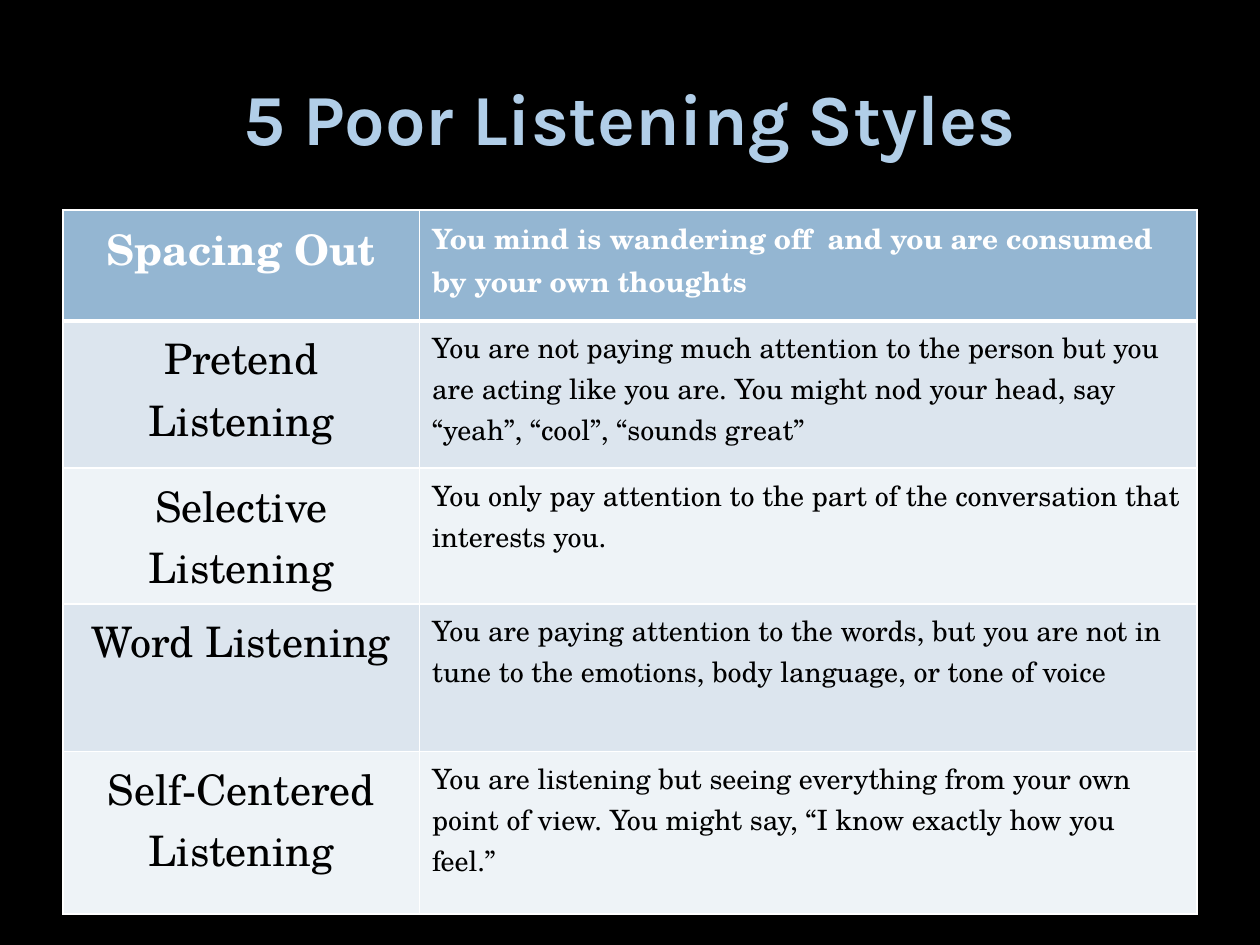
"""Build a slide with a table of five poor listening styles."""
from pptx import Presentation
from pptx.dml.color import RGBColor
from pptx.enum.text import MSO_ANCHOR as Anchor, PP_ALIGN as Align
from pptx.oxml import parse_xml
from pptx.oxml.ns import nsdecls
from pptx.util import Pt

BLACK = RGBColor(0x00, 0x00, 0x00)
WHITE = RGBColor(0xFF, 0xFF, 0xFF)
TITLE_BLUE = RGBColor(0xB1, 0xCE, 0xE8)
HEADER_BLUE = RGBColor(0x94, 0xB6, 0xD2)
BAND_DARK = RGBColor(0xDC, 0xE5, 0xEE)
BAND_LIGHT = RGBColor(0xEE, 0xF3, 0xF7)

COLUMN_WIDTHS = (203.76, 444.24)
ROW_HEIGHTS = (63.36, 84.24, 69.12, 84.24, 92.88)
STYLES = (
    ("Spacing Out", "You mind is wandering off  and you are consumed by your own thoughts"),
    ("Pretend Listening", "You are not paying much attention to the person but you are acting like you are. "
                          "You might nod your head, say “yeah”, “cool”, “sounds great”"),
    ("Selective Listening", "You only pay attention to the part of the conversation that interests you."),
    ("Word Listening", "You are paying attention to the words, but you are not in tune to the emotions, "
                       "body language, or tone of voice"),
    ("Self-Centered Listening", "You are listening but seeing everything from your own point of view. "
                                "You might say, “I know exactly how you feel.”"),
)


def write_text(frame, text, *, font, size, color, bold=False, align=Align.LEFT):
    paragraph = frame.paragraphs[0]
    paragraph.alignment = align
    run = paragraph.add_run()
    run.text = text
    run.font.name = font
    run.font.size = Pt(size)
    run.font.bold = bold
    run.font.color.rgb = color


def set_borders(cell, bottom, color=WHITE):
    properties = cell._tc.get_or_add_tcPr()
    widths = {"lnL": 1, "lnR": 1, "lnT": 1, "lnB": bottom}
    for position, (tag, width) in enumerate(widths.items()):
        properties.insert(position, parse_xml(
            f'<a:{tag} {nsdecls("a")} w="{Pt(width)}"><a:solidFill>'
            f'<a:srgbClr val="{color}"/></a:solidFill></a:{tag}>'))


class SlideBuilder:
    title_font = "Karla"
    body_font = "TeX Gyre Schola"

    def __init__(self, presentation):
        self.slide = presentation.slides.add_slide(presentation.slide_layouts[5])
        fill = self.slide.background.fill
        fill.solid()
        fill.fore_color.rgb = BLACK

    def title(self, text, left, top, width, height):
        shape = self.slide.shapes.title
        shape.left, shape.top, shape.width, shape.height = map(Pt, (left, top, width, height))
        shape.text_frame.vertical_anchor = Anchor.MIDDLE
        write_text(shape.text_frame, text, font=self.title_font, size=41,
                   color=TITLE_BLUE, bold=True, align=Align.CENTER)

    def table(self, rows, left, top, widths, heights):
        table = self.slide.shapes.add_table(
            len(rows), len(widths), Pt(left), Pt(top), Pt(sum(widths)), Pt(sum(heights))).table
        for column, width in zip(table.columns, widths):
            column.width = Pt(width)
        for index, (row, height, texts) in enumerate(zip(table.rows, heights, rows)):
            row.height = Pt(height)
            header = index == 0
            fill = HEADER_BLUE if header else BAND_DARK if index % 2 else BAND_LIGHT
            formats = ((24, Align.CENTER), (16, Align.LEFT))
            for cell, text, (size, align) in zip(row.cells, texts, formats):
                cell.fill.solid()
                cell.fill.fore_color.rgb = fill
                set_borders(cell, bottom=3 if header else 1)
                write_text(cell.text_frame, text, font=self.body_font, size=size,
                           color=WHITE if header else BLACK, bold=header, align=align)


def main():
    presentation = Presentation()
    presentation.slide_width, presentation.slide_height = Pt(720), Pt(540)
    builder = SlideBuilder(presentation)
    builder.title("5 Poor Listening Styles", 36, 21.6, 648, 90)
    builder.table(STYLES, 36, 120, COLUMN_WIDTHS, ROW_HEIGHTS)
    presentation.save("out.pptx")


if __name__ == "__main__":
    main()
